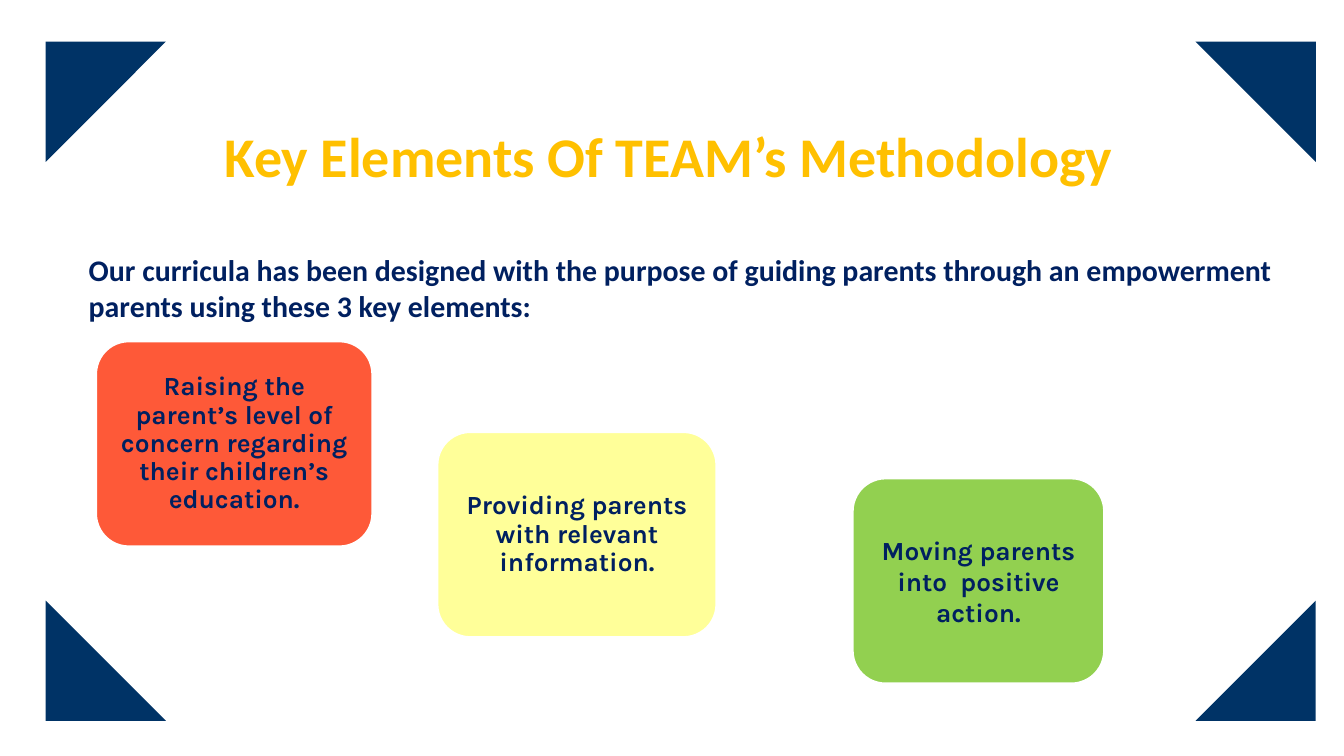
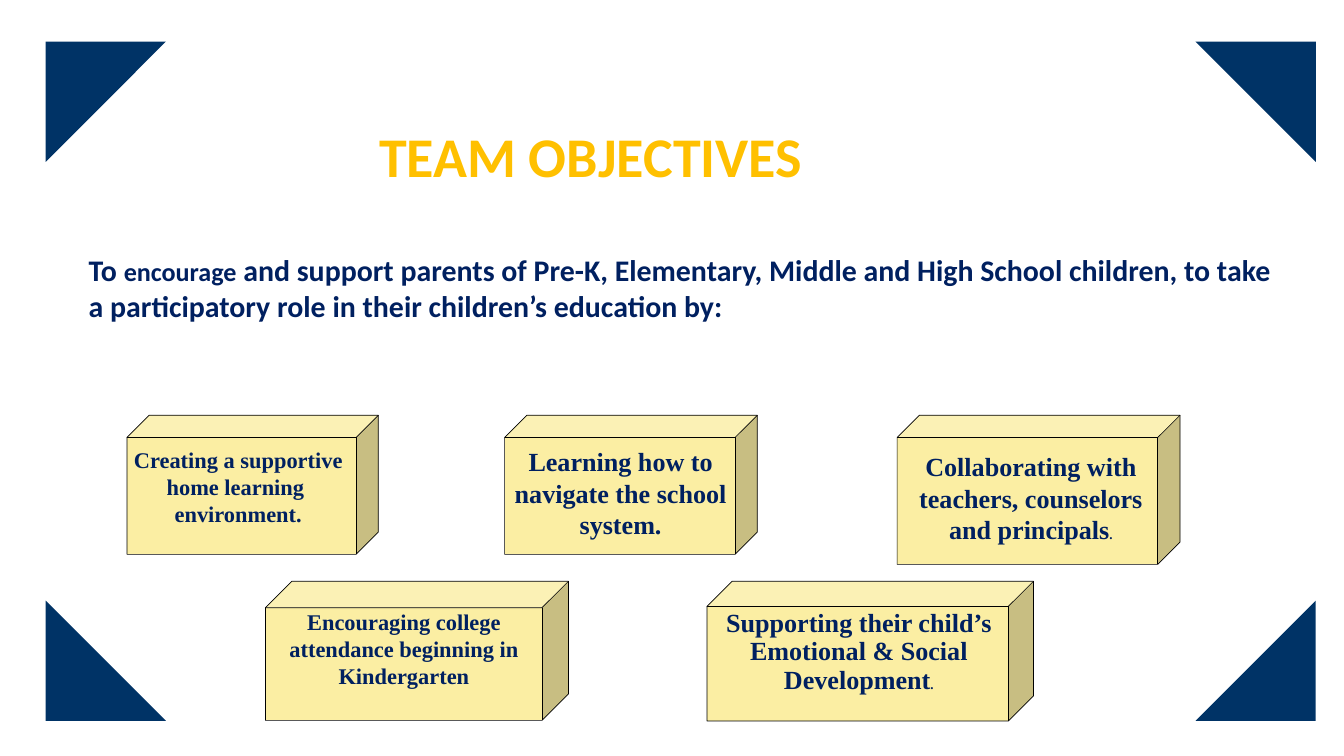
from dataclasses import dataclass

from pptx import Presentation
from pptx.dml.color import RGBColor as RGB
from pptx.enum.shapes import MSO_SHAPE as Shape
from pptx.enum.text import MSO_ANCHOR as Anchor, MSO_AUTO_SIZE as AutoSize, PP_ALIGN as Align
from pptx.oxml.ns import qn
from pptx.util import Inches, Pt


@dataclass(frozen=True)
class Theme:
    corner: RGB = RGB.from_string("003366")
    title: RGB = RGB.from_string("FFC000")
    text: RGB = RGB.from_string("002060")
    cube: RGB = RGB.from_string("FBEEA3")
    red: RGB = RGB.from_string("FE5938")
    yellow: RGB = RGB.from_string("FFFF99")
    green: RGB = RGB.from_string("92D050")
    white: RGB = RGB.from_string("FFFFFF")
    black: RGB = RGB.from_string("000000")
    title_size: int = 60
    lead_size: int = 32
    large: int = 28
    medium: int = 24
    small: int = 14


T = Theme()
prs = Presentation()
prs.slide_width, prs.slide_height = Inches(20), Inches(11.25)
COL, ROW = prs.slide_width / 100, prs.slide_height / 100


def area(x, y, w, h):
    """Turn columns and rows of a 100 by 100 grid into slide lengths."""
    return round(x * COL), round(y * ROW), round(w * COL), round(h * ROW)


def write(tf, text, font, size, color=T.text, align=Align.CENTER, spacing=1.0):
    """Fill a frame; text is a string or a list of (text, size) runs."""
    tf.word_wrap = True
    if isinstance(text, str):
        tf.text = text
    else:
        for words, run_size in text:
            r = tf.paragraphs[0].add_run()
            r.text, r.font.size = words, Pt(run_size)
    for p in tf.paragraphs:
        p.font.name, p.font.size, p.font.bold = font, Pt(size), True
        p.font.color.rgb = color
        p.alignment, p.line_spacing, p.space_before = align, spacing, Pt(0)


# Shared frame: corner triangles, title and lead sentence
pages = [
    ("Key Elements Of TEAM’s Methodology", 16.2, 80.4,
     "Our curricula has been designed with the purpose of guiding parents through "
     "an empowerment parents using these 3 key elements:"),
    ("TEAM OBJECTIVES", 27.7, 47.6,
     [("To ", T.lead_size), ("encourage", T.large),
      (" and support parents of Pre-K, Elementary, Middle and High School children, "
       "to take a participatory role in their children’s education by:", T.lead_size)]),
]
LEFT, RIGHT, TOP, BOTTOM = 3.4, 88.95, 5.5, 79.45
corners = [(LEFT, BOTTOM), (LEFT, TOP), (RIGHT, TOP), (RIGHT, BOTTOM)]

for title, title_x, title_w, lead in pages:
    s = prs.slides.add_slide(prs.slide_layouts[1])
    for turn, (x, y) in enumerate(corners):
        sp = s.shapes.add_shape(Shape.RIGHT_TRIANGLE, *area(x, y, 8.95, 15.9))
        sp.rotation = 90 * turn
        sp.shadow.inherit = False
        sp.fill.solid()
        sp.fill.fore_color.rgb = T.corner
        sp.line.fill.background()

    heading, body = s.placeholders
    heading.left, heading.top, heading.width, heading.height = area(title_x, 15.64, title_w, 9.87)
    body.left, body.top, body.width, body.height = area(6.1, 32.89, 90.55, 10.49)
    write(heading.text_frame, title, "Calibri", T.title_size, T.title, Align.LEFT)
    write(body.text_frame, lead, "Calibri", T.lead_size, align=Align.LEFT)
    for holder in (heading, body):
        holder.text_frame.vertical_anchor = Anchor.TOP
        holder.text_frame.auto_size = AutoSize.NONE
    pPr = body.text_frame.paragraphs[0]._p.get_or_add_pPr()
    pPr.set("marL", "0")
    pPr.set("indent", "0")
    pPr.insert_element_before(pPr.makeelement(qn("a:buNone"), {}), "a:tabLst", "a:defRPr")

methodology, objectives = prs.slides

# Three key elements, stepping down to the right
elements = [
    (7.15, 45.16, 20.55, T.red, 0.9,
     "Raising the parent’s level of concern regarding their children’s education."),
    (32.55, 57.16, 20.75, T.yellow, 0.9, "Providing parents with relevant information."),
    (63.45, 63.29, 18.7, T.green, 1.0, "Moving parents into  positive action."),
]
for x, y, w, color, spacing, text in elements:
    sp = methodology.shapes.add_shape(Shape.ROUNDED_RECTANGLE, *area(x, y, w, 27.11))
    sp.adjustments[0] = 0.16
    sp.shadow.inherit = False
    sp.fill.solid()
    sp.fill.fore_color.rgb = color
    sp.line.color.rgb, sp.line.width = T.white, Pt(2)
    tf = sp.text_frame
    tf.margin_left = tf.margin_right = tf.margin_top = tf.margin_bottom = Inches(0.1)
    tf.vertical_anchor = Anchor.MIDDLE
    write(tf, text, "Karla", T.large, spacing=spacing)

# Five objectives: cube area, cube depth, label area, size, spacing, text
UPPER, LOWER = 54.93, 76.89
cubes = [
    ((9.45, UPPER, 18.7, 18.4), 0.16, (8.3, 58.58, 18.85, 11.64), T.medium, 1.0,
     "Creating a supportive\nhome learning \nenvironment."),
    ((37.55, UPPER, 18.8, 18.4), 0.16, (37.1, 58.49, 18.15, 14.84), T.large, 1.0,
     "Learning how to navigate the school system."),
    ((66.75, UPPER, 21.05, 19.73), 0.15, (67.3, 59.2, 18.8, 13.51), T.large, 1.0,
     [("Collaborating with teachers, counselors and principals", T.large), (".", T.small)]),
    ((19.75, LOWER, 22.55, 18.4), 0.19, (19.75, 80, 20.6, 15.29), T.medium, 1.0,
     "Encouraging college attendance beginning in Kindergarten"),
    ((52.6, LOWER, 24.3, 18.49), 0.18, (51.75, 80.27, 24.3, 12.18), T.large, 0.9,
     [("Supporting their child’s Emotional & Social Development", T.large), (".", T.small)]),
]
for cube_area, depth, label_area, size, spacing, text in cubes:
    group = objectives.shapes.add_group_shape()
    cube = group.shapes.add_shape(Shape.CUBE, *area(*cube_area))
    cube.adjustments[0] = depth
    cube.shadow.inherit = False
    cube.fill.solid()
    cube.fill.fore_color.rgb = T.cube
    cube.line.color.rgb, cube.line.width = T.black, Pt(0.75)
    label = group.shapes.add_textbox(*area(*label_area))
    write(label.text_frame, text, "Times New Roman", size, spacing=spacing)

prs.save("out.pptx")
